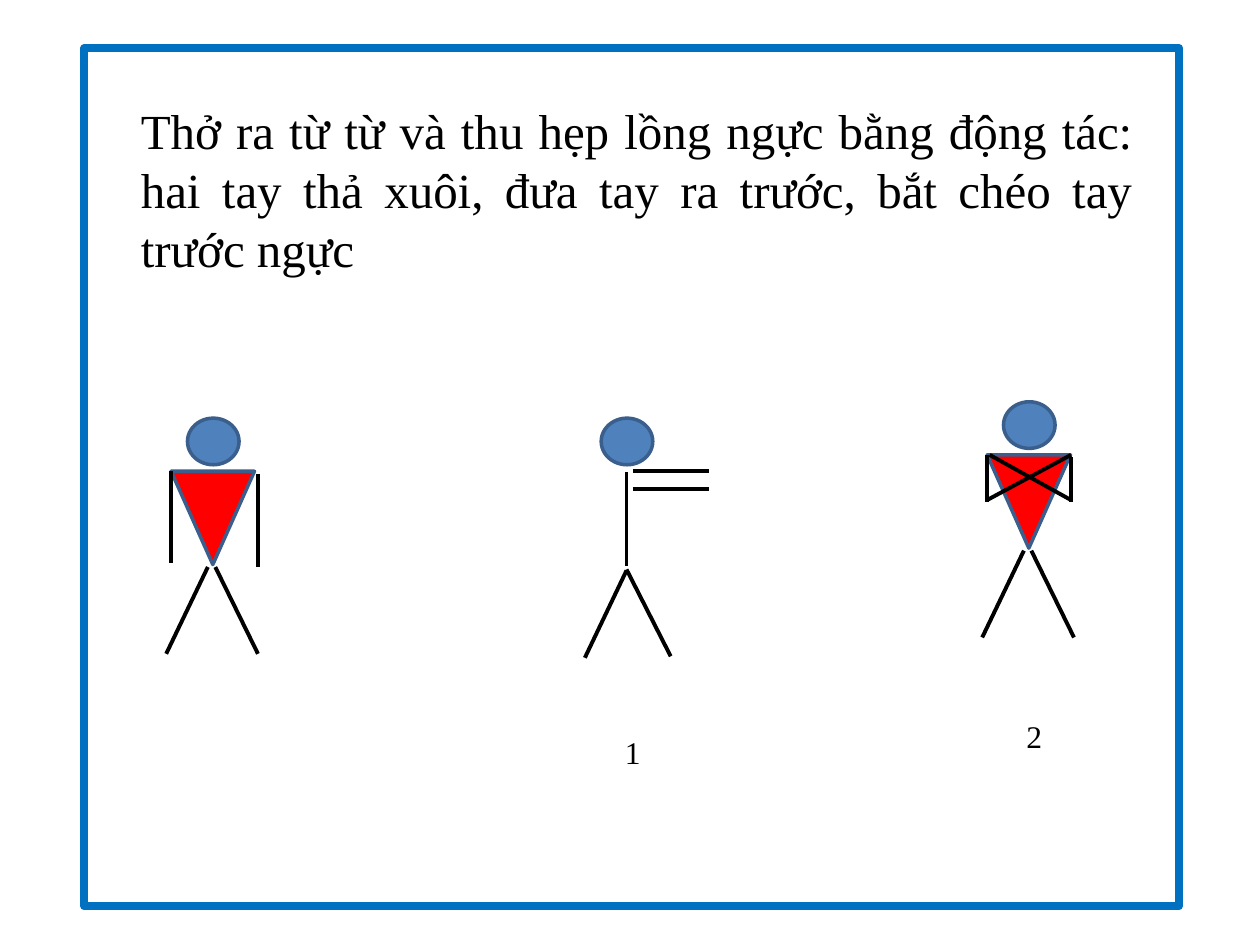
from lxml.etree import SubElement
from pptx import Presentation
from pptx.dml.color import RGBColor
from pptx.enum.shapes import MSO_CONNECTOR as CONN, MSO_SHAPE as SHAPE
from pptx.enum.text import MSO_AUTO_SIZE as AUTO, PP_ALIGN as ALIGN
from pptx.oxml.ns import qn
from pptx.util import Cm, Pt

WHITE = RGBColor(0xFF, 0xFF, 0xFF)
BLACK = RGBColor(0, 0, 0)
RED = RGBColor(0xFF, 0, 0)
HEAD_BLUE = RGBColor(0x4F, 0x81, 0xBD)
EDGE_BLUE = RGBColor(0x3A, 0x5F, 0x8C)
FRAME_BLUE = RGBColor(0x00, 0x70, 0xC0)
FONT = "Times New Roman"


def add_shape(shapes, kind, x, y, w, h, fill, line, width):
    sp = shapes.add_shape(kind, Cm(x), Cm(y), Cm(w), Cm(h))
    sp.shadow.inherit = False
    sp.fill.solid()
    sp.fill.fore_color.rgb = fill
    sp.line.color.rgb = line
    sp.line.width = Pt(width)
    return sp


def add_text(shapes, text, x, y, w, h, size, align=ALIGN.LEFT):
    tf = shapes.add_textbox(Cm(x), Cm(y), Cm(w), Cm(h)).text_frame
    tf.word_wrap = True
    tf.auto_size = AUTO.SHAPE_TO_FIT_TEXT
    p = tf.paragraphs[0]
    p.text = text
    p.alignment = align
    p.font.name = FONT
    p.font.size = Pt(size)
    p.font.color.rgb = BLACK


def add_limbs(shapes, left, top, limbs):
    for x1, y1, x2, y2 in limbs:
        ln = shapes.add_connector(CONN.STRAIGHT, Cm(left + x1), Cm(top + y1),
                                  Cm(left + x2), Cm(top + y2))
        ln.line.color.rgb = BLACK
        ln.line.width = Pt(2.25)
        SubElement(ln._element.spPr, qn("a:effectLst"))


def add_head(shapes, x, y):
    add_shape(shapes, SHAPE.OVAL, x, y, 1.04, 0.94, HEAD_BLUE, EDGE_BLUE, 2)


def add_label(shapes, text, x, y):
    add_text(shapes, text, x, y, 1.22, 0.97, 18)


def add_front_figure(slide, left, top, arms, label=None, crossed=()):
    shapes = slide.shapes.add_group_shape().shapes
    add_head(shapes, left + 0.43, top)
    torso = add_shape(shapes, SHAPE.ISOSCELES_TRIANGLE, left + 0.1, top + 1.07,
                      1.68, 1.88, RED, EDGE_BLUE, 2)
    torso.rotation = 180
    legs = [(0.84, 3, 0, 4.75), (0.99, 3, 1.85, 4.75)]
    add_limbs(shapes, left, top, arms + legs)
    if label:
        add_label(shapes, label, left + 0.64, top + 6.22)
    add_limbs(slide.shapes, left, top, crossed)


def add_side_figure(slide, left, top, label):
    shapes = slide.shapes.add_group_shape().shapes
    add_head(shapes, left + 0.33, top)
    arms = [(0.97, y, 2.51, y) for y in (1.07, 1.42)]
    spine = [(0.84, 1.09, 0.84, 2.97)]
    legs = [(0.84, 3.07, 0, 4.83), (0.84, 3.05, 1.73, 4.8)]
    add_limbs(shapes, left, top, arms + spine + legs)
    add_label(shapes, label, left + 0.56, top + 6.22)


def add_instruction(slide, left, top, width, height):
    add_shape(slide.shapes, SHAPE.RECTANGLE, left, top, width, height,
              WHITE, FRAME_BLUE, 4.5)
    add_text(slide.shapes,
             "Thở ra từ từ và thu hẹp lồng ngực bằng động tác: hai tay thả "
             "xuôi, đưa tay ra trước, bắt chéo tay trước ngực",
             left + 0.89, top + 0.94, 20.5, 3.84, 28, ALIGN.JUSTIFY)


def main():
    prs = Presentation()
    prs.slide_width, prs.slide_height = Cm(25.4), Cm(19.05)
    slide = prs.slides.add_slide(prs.slide_layouts[6])
    add_instruction(slide, 1.7, 0.97, 22.07, 17.3)
    add_front_figure(slide, 3.35, 8.43,
                     [(0.1, 1.07, 0.1, 2.92), (1.85, 1.12, 1.85, 3)])
    add_side_figure(slide, 11.79, 8.43, "1")
    add_front_figure(slide, 19.8, 8.1,
                     [(0.1, 1.07, 0.1, 2.01), (1.79, 1.12, 1.79, 2.01)], "2",
                     [(0.1, 1.98, 1.79, 1.07), (0.15, 1.07, 1.79, 1.98)])
    prs.save("out.pptx")


if __name__ == "__main__":
    main()
